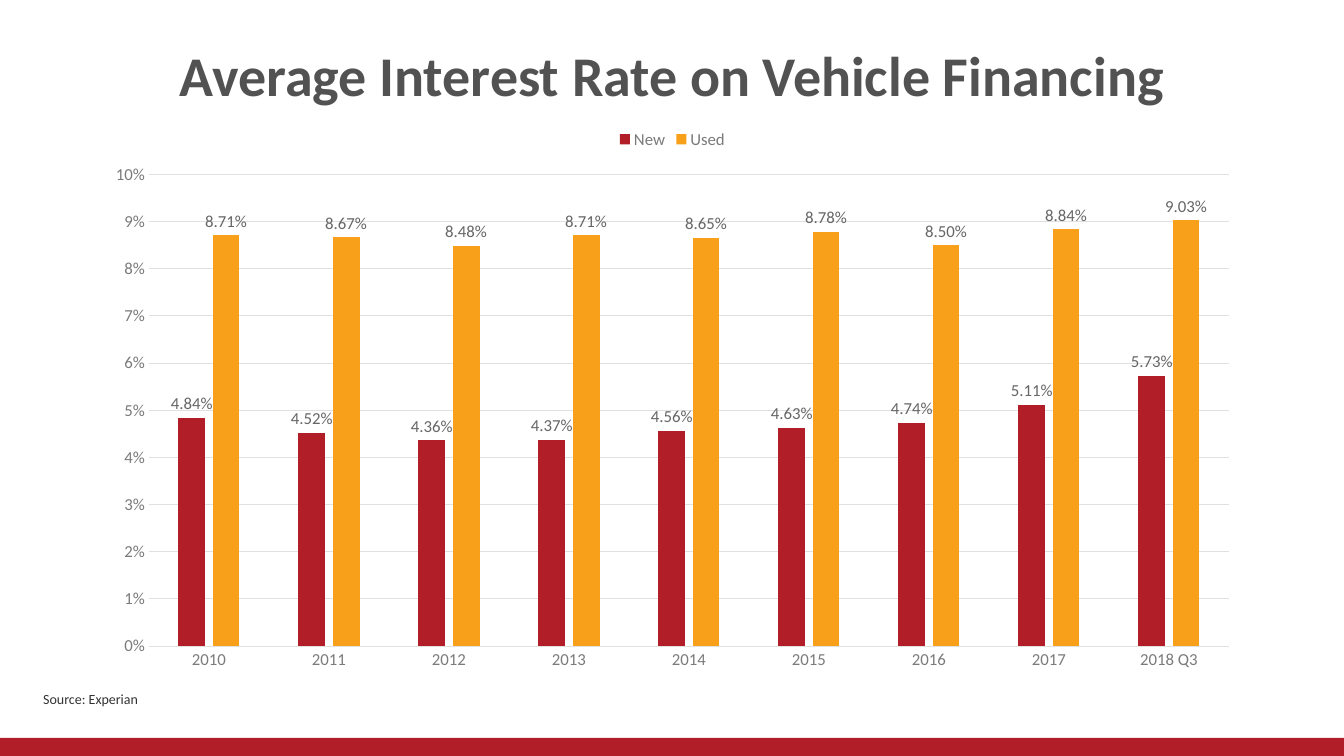
from dataclasses import dataclass

from pptx import Presentation
from pptx.chart.data import CategoryChartData
from pptx.dml.color import RGBColor
from pptx.enum.chart import XL_CHART_TYPE as ChartType
from pptx.enum.chart import XL_LABEL_POSITION as LabelPos
from pptx.enum.chart import XL_LEGEND_POSITION as LegendPos
from pptx.enum.chart import XL_TICK_MARK as Tick
from pptx.enum.shapes import MSO_SHAPE as Shape
from pptx.enum.text import MSO_ANCHOR as Anchor
from pptx.enum.text import PP_ALIGN as Align
from pptx.util import Inches, Pt

RED = RGBColor(0xB2, 0x1E, 0x28)
ORANGE = RGBColor(0xF9, 0xA0, 0x1B)
TITLE_GREY = RGBColor(0x52, 0x52, 0x52)
INK = RGBColor(0x34, 0x33, 0x33)
AXIS_GREY = RGBColor(0x7C, 0x7A, 0x7A)
LABEL_GREY = RGBColor(0x67, 0x65, 0x65)
GRID_GREY = RGBColor(0xE1, 0xE0, 0xE0)
FONT = "Calibri"
WIDTH, HEIGHT = Inches(13.33), Inches(7.5)


@dataclass
class Box:
    left: float
    top: float
    width: float
    height: float

    def emu(self) -> tuple[int, int, int, int]:
        return (int(self.left * WIDTH / 100), int(self.top * HEIGHT / 100),
                int(self.width * WIDTH / 100), int(self.height * HEIGHT / 100))


@dataclass
class Label:
    text: str
    box: Box
    size: int
    color: RGBColor
    bold: bool = False
    align: Align = Align.LEFT
    anchor: Anchor = Anchor.TOP


@dataclass
class Rate:
    name: str
    color: RGBColor
    percents: list[float]


FOOTER = Box(0, 97.6, 100, 2.4)
CHART = Box(6.9, 15.6, 86.27, 74.53)
LABELS = [
    Label("Average Interest Rate on Vehicle Financing", Box(5, 4.53, 90, 10.67),
          40, TITLE_GREY, True, Align.CENTER, Anchor.MIDDLE),
    Label("Source: Experian", Box(2.48, 90.67, 26.86, 3.6), 10, INK),
]
PERIODS = [str(year) for year in range(2010, 2018)] + ["2018 Q3"]
RATES = [
    Rate("New", RED, [4.84, 4.52, 4.36, 4.37, 4.56, 4.63, 4.74, 5.11, 5.73]),
    Rate("Used", ORANGE, [8.71, 8.67, 8.48, 8.71, 8.65, 8.78, 8.50, 8.84, 9.03]),
]


def set_font(font, size: int, color: RGBColor, bold: bool = False) -> None:
    font.name, font.size, font.bold = FONT, Pt(size), bold
    font.color.rgb = color


def set_line(line) -> None:
    line.color.rgb = GRID_GREY
    line.width = Pt(0.75)


def add_label(s, label: Label) -> None:
    tf = s.shapes.add_textbox(*label.box.emu()).text_frame
    tf.word_wrap = True
    tf.vertical_anchor = label.anchor
    p = tf.paragraphs[0]
    p.text = label.text
    p.alignment = label.align
    set_font(p.font, label.size, label.color, label.bold)


def add_footer(s) -> None:
    sp = s.shapes.add_shape(Shape.RECTANGLE, *FOOTER.emu())
    sp.shadow.inherit = False
    sp.fill.solid()
    sp.fill.fore_color.rgb = RED
    sp.line.fill.background()


def style_series(series, rate: Rate) -> None:
    series.format.fill.solid()
    series.format.fill.fore_color.rgb = rate.color
    series.invert_if_negative = False
    labels = series.data_labels
    labels.show_value = True
    labels.position = LabelPos.OUTSIDE_END
    labels.number_format = "0.00%"
    labels.number_format_is_linked = False
    set_font(labels.font, 12, LABEL_GREY)


def add_rate_chart(s) -> None:
    data = CategoryChartData(number_format="0.00%")
    data.categories = PERIODS
    for rate in RATES:
        data.add_series(rate.name, [round(v / 100, 4) for v in rate.percents])
    chart = s.shapes.add_chart(ChartType.COLUMN_CLUSTERED, *CHART.emu(), data).chart
    set_font(chart.font, 10, INK)
    chart.has_title = False
    chart.has_legend = True
    chart.legend.position = LegendPos.TOP
    chart.legend.include_in_layout = False
    set_font(chart.legend.font, 12, AXIS_GREY)

    for axis in (chart.category_axis, chart.value_axis):
        axis.major_tick_mark = axis.minor_tick_mark = Tick.NONE
        set_font(axis.tick_labels.font, 12, AXIS_GREY)
    set_line(chart.category_axis.format.line)
    values = chart.value_axis
    values.minimum_scale, values.maximum_scale, values.major_unit = 0, 0.1, 0.01
    values.format.line.fill.background()
    values.has_major_gridlines = True
    set_line(values.major_gridlines.format.line)
    values.tick_labels.number_format = "0%"
    values.tick_labels.number_format_is_linked = False

    plot = chart.plots[0]
    plot.gap_width, plot.overlap = 219, -27
    plot.vary_by_categories = False
    for series, rate in zip(plot.series, RATES):
        style_series(series, rate)


def main() -> None:
    prs = Presentation()
    prs.slide_width, prs.slide_height = WIDTH, HEIGHT
    s = prs.slides.add_slide(prs.slide_layouts[6])
    add_footer(s)
    add_rate_chart(s)
    for label in LABELS:
        add_label(s, label)
    prs.save("out.pptx")


if __name__ == "__main__":
    main()
